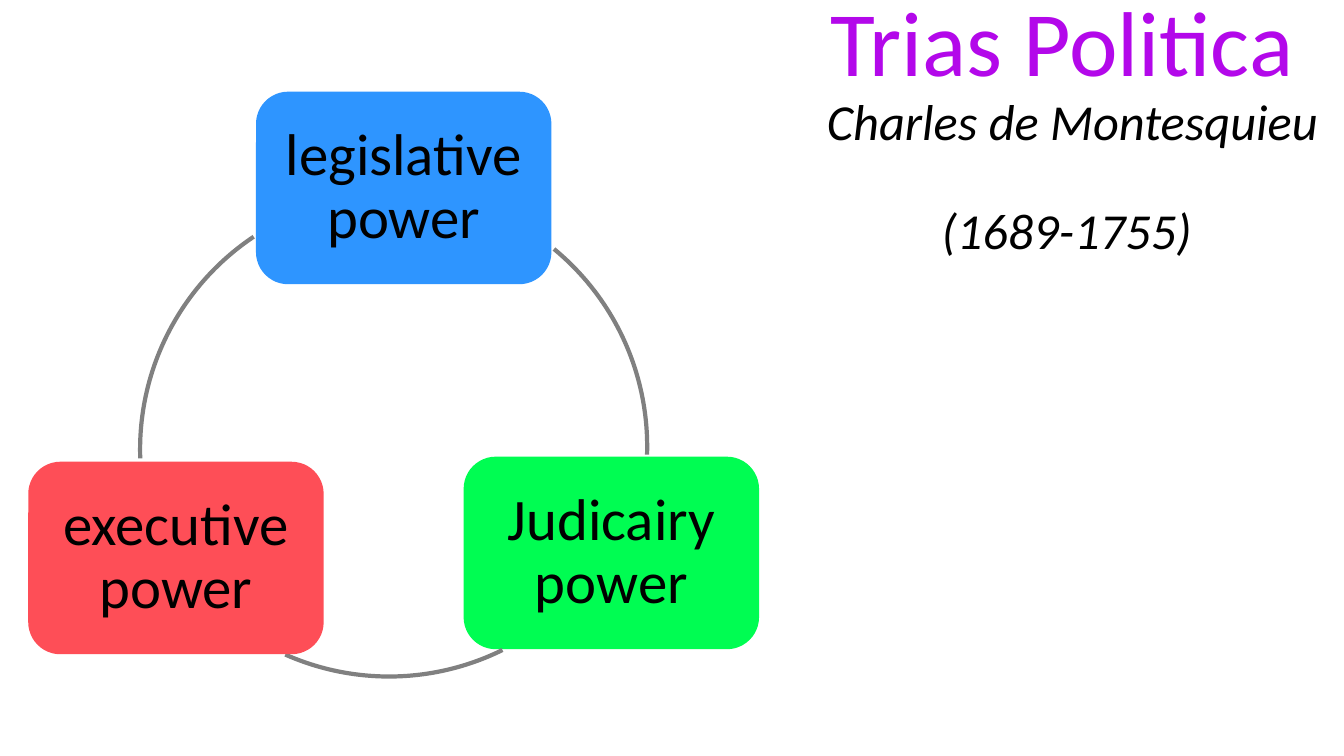
from dataclasses import dataclass

from pptx import Presentation
from pptx.dml.color import RGBColor
from pptx.enum.shapes import MSO_SHAPE
from pptx.enum.text import MSO_ANCHOR, PP_ALIGN
from pptx.util import Pt

ARC = MSO_SHAPE.ARC
ROUNDED = MSO_SHAPE.ROUNDED_RECTANGLE
CENTER = PP_ALIGN.CENTER
MIDDLE = MSO_ANCHOR.MIDDLE


@dataclass(frozen=True)
class Theme:
    font: str = "Calibri"
    title_size: float = 65.7
    subtitle_size: float = 36
    power_size: float = 42
    line_spacing: float = 0.9
    arc_width: float = 3
    title: str = "B308EA"
    text: str = "000000"
    arc: str = "808080"
    legislative: str = "2E95FF"
    judiciary: str = "00FD52"
    executive: str = "FE4E57"


THEME = Theme()
POWER_SIZE = (211, 137.5)
ARC_DIAMETER = 365.8

# label, fill, left and top within the cycle
POWERS = [
    ("legislative power", THEME.legislative, 162.7, 0),
    ("Judicairy power", THEME.judiciary, 311, 260.7),
    ("executive power", THEME.executive, 0, 264.3),
]
# left and top within the cycle, start and end in degrees clockwise from the right
ARCS = [
    (76.3, 70.6, 309.5, 1.8),
    (74.8, 51.9, 63.7, 113.9),
    (79.9, 72.7, 178, 236.2),
]


def color(value):
    return RGBColor.from_string(value)


def style_paragraph(para, size, ink, italic=False):
    para.alignment = CENTER
    para.line_spacing = THEME.line_spacing
    font = para.font
    font.name = THEME.font
    font.size = Pt(size)
    font.italic = italic
    font.color.rgb = color(ink)


def set_frame(frame, inset):
    """Wrap and centre the text, with one inset on all four sides."""
    frame.word_wrap = True
    frame.vertical_anchor = MIDDLE
    frame.margin_left = frame.margin_right = Pt(inset)
    frame.margin_top = frame.margin_bottom = Pt(inset)


def add_heading(page, left, top, width, height):
    box = page.shapes.add_textbox(Pt(left), Pt(top), Pt(width), Pt(height))
    frame = box.text_frame
    set_frame(frame, 0)
    frame.text = "Trias Politica \nCharles de Montesquieu\n(1689-1755) "
    title, author, years = frame.paragraphs
    style_paragraph(title, THEME.title_size, THEME.title)
    for para in (author, years):
        style_paragraph(para, THEME.subtitle_size, THEME.text, italic=True)
    years.space_before = Pt(39.5)


def add_power(page, left, top, label, fill):
    width, height = POWER_SIZE
    box = page.shapes.add_shape(ROUNDED, Pt(left), Pt(top), Pt(width), Pt(height))
    box.shadow.inherit = False
    box.fill.solid()
    box.fill.fore_color.rgb = color(fill)
    box.line.fill.background()
    set_frame(box.text_frame, 12)
    box.text_frame.text = label
    style_paragraph(box.text_frame.paragraphs[0], THEME.power_size, THEME.text)


def add_arc(page, left, top, start, end):
    side = Pt(ARC_DIAMETER)
    arc = page.shapes.add_shape(ARC, Pt(left), Pt(top), side, side)
    arc.shadow.inherit = False
    arc.fill.background()
    arc.line.color.rgb = color(THEME.arc)
    arc.line.width = Pt(THEME.arc_width)
    # An angle is stored in 60000ths of a degree, an adjustment in 100000ths.
    for index, angle in enumerate((start, end)):
        arc.adjustments[index] = angle * 0.6


def add_cycle(page, left, top):
    for (label, fill, x, y), (arc_x, arc_y, start, end) in zip(POWERS, ARCS):
        add_power(page, left + x, top + y, label, fill)
        add_arc(page, left + arc_x, top + arc_y, start, end)


def main():
    deck = Presentation()
    deck.slide_width, deck.slide_height = Pt(960), Pt(540)
    page = deck.slides.add_slide(deck.slide_layouts[6])
    add_heading(page, 580.3, 22.3, 371.5, 139.7)
    add_cycle(page, 20.2, 65.5)
    deck.save("out.pptx")


if __name__ == "__main__":
    main()
